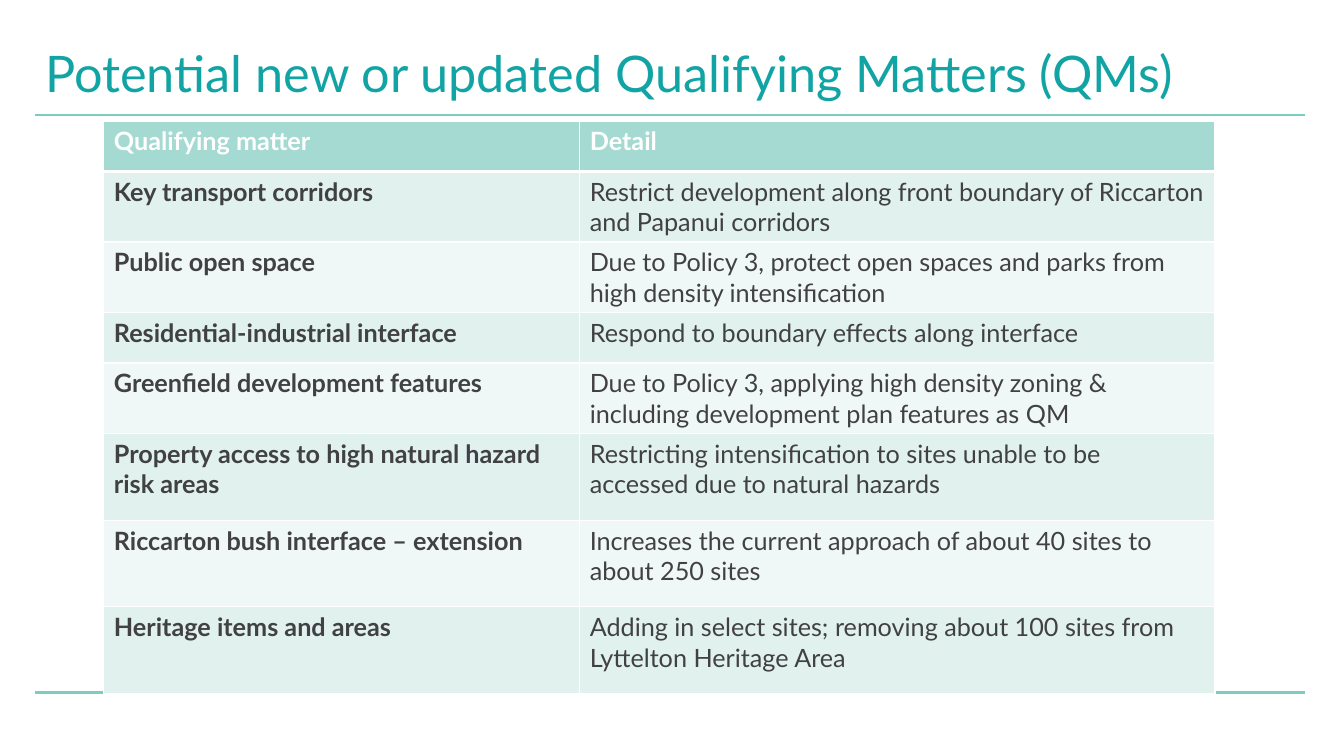
from dataclasses import dataclass

from lxml import etree
from pptx import Presentation
from pptx import util as u
from pptx.dml.color import RGBColor
from pptx.enum import shapes, text
from pptx.oxml import ns

PX = 9144  # EMU in one px, 100 px to the inch


@dataclass(frozen=True)
class Theme:
    font: str = "Lato"
    title: str = "12A4A4"
    rule: str = "7CCCBF"
    head: str = "A4DAD2"
    bands: tuple[str, str] = ("E0F1EE", "F0F8F7")
    ink: str = "414042"
    white: str = "FFFFFF"
    title_pt: int = 36
    body_pt: int = 18
    rule_pt: float = 1.5
    grid_pt: int = 1
    head_pt: int = 3


@dataclass(frozen=True)
class Matter:
    name: str
    detail: str
    high: int


THEME = Theme()
HEAD = Matter("Qualifying matter", "Detail", 50)
MATTERS = [
    Matter("Key transport corridors",
           "Restrict development along front boundary of Riccarton and Papanui corridors", 70),
    Matter("Public open space",
           "Due to Policy 3, protect open spaces and parks from high density intensification", 70),
    Matter("Residential-industrial interface",
           "Respond to boundary effects along interface", 50),
    Matter("Greenfield development features",
           "Due to Policy 3, applying high density zoning & including development plan features as QM", 70),
    Matter("Property access to high natural hazard risk areas",
           "Restricting intensification to sites unable to be accessed due to natural hazards", 86),
    Matter("Riccarton bush interface – extension",
           "Increases the current approach of about 40 sites to about 250 sites", 86),
    Matter("Heritage items and areas",
           "Adding in select sites; removing about 100 sites from Lyttelton Heritage Area", 86),
]
COLS = (472, 630)
RULES = (687, 114)


def px(size: int) -> u.Emu:
    return u.Emu(size * PX)


def rgb(code: str) -> RGBColor:
    return RGBColor.from_string(code)


def add_run(para, words: str, size: int, color: str, bold: bool = False) -> None:
    run = para.add_run()
    run.text = words
    run.font.name = THEME.font
    run.font.size = u.Pt(size)
    run.font.bold = bold
    run.font.color.rgb = rgb(color)


def add_rule(slide, top: int) -> None:
    rule = slide.shapes.add_connector(
        shapes.MSO_CONNECTOR.STRAIGHT, px(35), px(top), px(1294), px(top))
    rule.line.color.rgb = rgb(THEME.rule)
    rule.line.width = u.Pt(THEME.rule_pt)
    etree.SubElement(rule._element.spPr, ns.qn("a:effectLst"))


def set_title(slide, words: str) -> None:
    title = slide.shapes.title
    title.left, title.top, title.width, title.height = map(px, (35, 40, 1260, 72))
    frame = title.text_frame
    frame.auto_size = text.MSO_AUTO_SIZE.NONE
    frame.vertical_anchor = text.MSO_ANCHOR.MIDDLE
    para = frame.paragraphs[0]
    para.alignment = text.PP_ALIGN.LEFT
    para.line_spacing = 0.9
    add_run(para, words, THEME.title_pt, THEME.title)


def set_edges(cell, top: int, base: int) -> None:
    """Draw the four cell borders; top and base are widths in points."""
    props = cell._tc.get_or_add_tcPr()
    edges = {"lnL": THEME.grid_pt, "lnR": THEME.grid_pt, "lnT": top, "lnB": base}
    for tag, width in edges.items():
        edge = etree.SubElement(props, ns.qn(f"a:{tag}"), w=str(u.Pt(width)))
        fill = etree.SubElement(edge, ns.qn("a:solidFill"))
        etree.SubElement(fill, ns.qn("a:srgbClr"), val=THEME.white)


def add_grid(slide) -> None:
    rows = [HEAD, *MATTERS]
    high = sum(row.high for row in rows)
    grid = slide.shapes.add_table(
        len(rows), len(COLS), px(103), px(120), px(sum(COLS)), px(high)).table
    for col, width in zip(grid.columns, COLS):
        col.width = px(width)
    for i, row in enumerate(rows):
        grid.rows[i].height = px(row.high)
        head = i == 0
        band = THEME.head if head else THEME.bands[(i - 1) % 2]
        ink = THEME.white if head else THEME.ink
        top = THEME.head_pt if i == 1 else THEME.grid_pt
        base = THEME.head_pt if head else THEME.grid_pt
        for j, words in enumerate((row.name, row.detail)):
            cell = grid.cell(i, j)
            set_edges(cell, top, base)
            cell.fill.solid()
            cell.fill.fore_color.rgb = rgb(band)
            add_run(cell.text_frame.paragraphs[0], words, THEME.body_pt, ink,
                    bold=head or j == 0)


def main() -> None:
    deck = Presentation()
    deck.slide_width, deck.slide_height = px(1333), px(750)
    slide = deck.slides.add_slide(deck.slide_layouts.get_by_name("Title Only"))
    for top in RULES:
        add_rule(slide, top)
    set_title(slide, "Potential new or updated Qualifying Matters (QMs)")
    add_grid(slide)
    deck.save("out.pptx")


if __name__ == "__main__":
    main()
